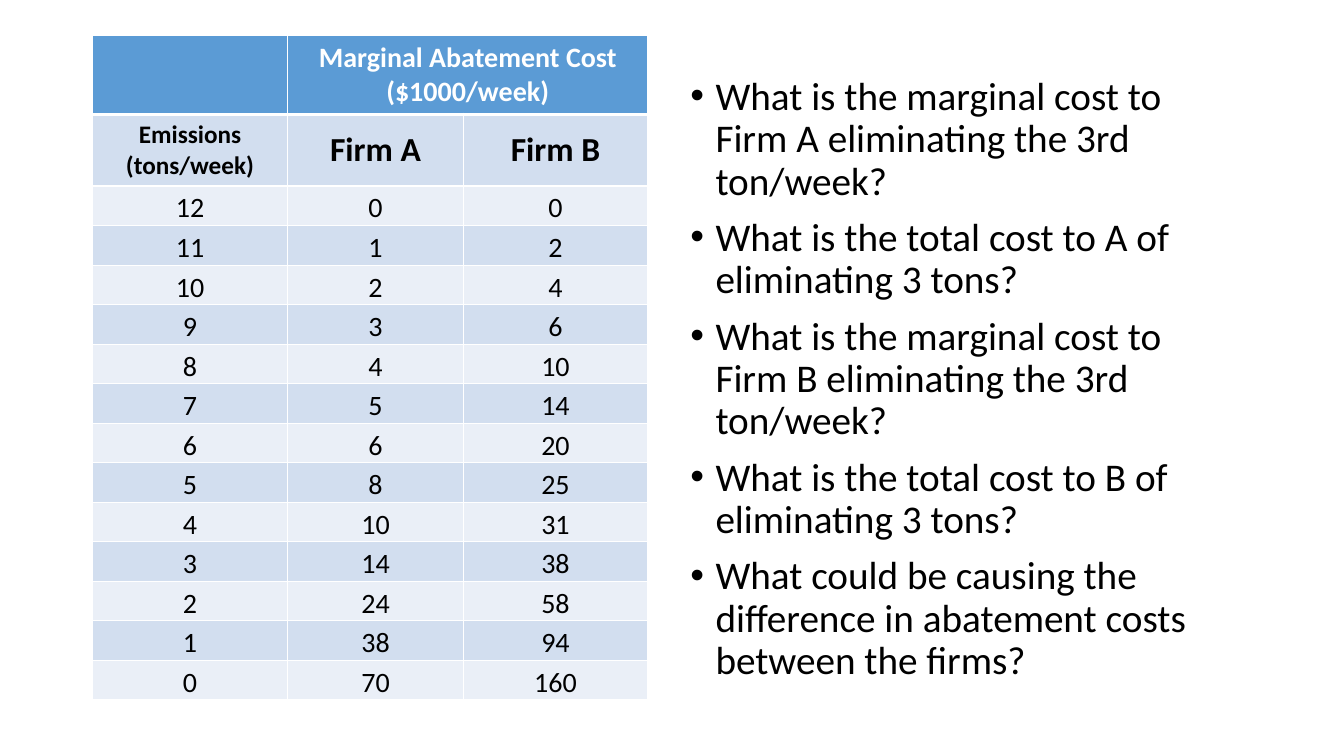
"""Builds a slide with a marginal abatement cost table and discussion questions."""
from lxml.etree import SubElement
from pptx import Presentation
from pptx.dml.color import RGBColor
from pptx.enum.text import MSO_ANCHOR as ANCHOR, PP_ALIGN as ALIGN
from pptx.oxml.ns import qn
from pptx.util import Pt

TITLE = "Marginal Abatement Cost ($1000/week)"
HEADINGS = [("Emissions (tons/week)", 18, ANCHOR.TOP),
            ("Firm A", 24, ANCHOR.MIDDLE),
            ("Firm B", 24, ANCHOR.MIDDLE)]
FIRM_A = [0, 1, 2, 3, 4, 5, 6, 8, 10, 14, 24, 38, 70]
FIRM_B = [0, 2, 4, 6, 10, 14, 20, 25, 31, 38, 58, 94, 160]
COSTS = list(zip(range(12, -1, -1), FIRM_A, FIRM_B))
QUESTIONS = [
    "What is the marginal cost to Firm A eliminating the 3rd ton/week?",
    "What is the total cost to A of eliminating 3 tons?",
    "What is the marginal cost to Firm B eliminating the 3rd ton/week?",
    "What is the total cost to B of eliminating 3 tons?",
    "What could be causing the difference in abatement costs between the firms?",
]

FONT = "Calibri"
WHITE = RGBColor(0xFF, 0xFF, 0xFF)
BLACK = RGBColor(0x00, 0x00, 0x00)
BLUE = RGBColor(0x5B, 0x9B, 0xD5)
BANDS = [RGBColor(0xEA, 0xEF, 0xF7), RGBColor(0xD2, 0xDE, 0xEF)]
COL_WIDTHS = [139.7, 125.3, 131.8]
ROW_HEIGHTS = [50.4, 46.1] + [28.25] * len(COSTS)
INDENT = 18


def style(p, size, color=BLACK, bold=False):
    for r in p.runs:
        r.font.name = FONT
        r.font.size = Pt(size)
        r.font.bold = bold
        r.font.color.rgb = color


def add_borders(cell, row):
    tc_pr = cell._tc.get_or_add_tcPr()
    widths = {"L": 1, "R": 1, "T": 3 if row == 1 else 1, "B": 3 if row == 0 else 1}
    for i, (side, width) in enumerate(widths.items()):
        ln = SubElement(tc_pr, qn(f"a:ln{side}"), w=str(Pt(width)))
        fill = SubElement(ln, qn("a:solidFill"))
        SubElement(fill, qn("a:srgbClr"), val=str(WHITE))
        tc_pr.insert(i, ln)


def write_cell(cell, text, size, anchor, color=BLACK, bold=True):
    cell.text_frame.text = str(text)
    cell.vertical_anchor = anchor
    p = cell.text_frame.paragraphs[0]
    p.alignment = ALIGN.CENTER
    style(p, size, color, bold)
    return p


def add_cost_table(slide):
    table = slide.shapes.add_table(len(ROW_HEIGHTS), len(COL_WIDTHS), Pt(65.9), Pt(25.5),
                                   Pt(sum(COL_WIDTHS)), Pt(sum(ROW_HEIGHTS))).table
    for col, width in zip(table.columns, COL_WIDTHS):
        col.width = Pt(width)
    for i, height in enumerate(ROW_HEIGHTS):
        table.rows[i].height = Pt(height)
        for cell in table.rows[i].cells:
            cell.fill.solid()
            cell.fill.fore_color.rgb = BANDS[i % 2] if i else BLUE
            add_borders(cell, i)

    table.cell(0, 1).merge(table.cell(0, 2))
    write_cell(table.cell(0, 1), TITLE, 20, ANCHOR.TOP, WHITE)
    for j, (text, size, anchor) in enumerate(HEADINGS):
        write_cell(table.cell(1, j), text, size, anchor)
    for i, values in enumerate(COSTS, 2):
        for j, value in enumerate(values):
            cell = table.cell(i, j)
            p = write_cell(cell, value, 20, ANCHOR.BOTTOM, bold=False)
            p.line_spacing = 1.15
            cell.margin_left = cell.margin_right = Pt(5)
            cell.margin_top = cell.margin_bottom = 0


def add_questions(slide):
    tf = slide.shapes.add_textbox(Pt(486), Pt(51.1), Pt(406), Pt(466.6)).text_frame
    tf.word_wrap = True
    for i, question in enumerate(QUESTIONS):
        p = tf.add_paragraph() if i else tf.paragraphs[0]
        p.text = question
        p.line_spacing = 0.9
        p.space_before = Pt(10)
        style(p, 28)
        p_pr = p._p.get_or_add_pPr()
        p_pr.set("marL", str(Pt(INDENT)))
        p_pr.set("indent", str(-Pt(INDENT)))
        SubElement(p_pr, qn("a:buFont"), typeface="Arial")
        SubElement(p_pr, qn("a:buChar"), char="•")


def main():
    prs = Presentation()
    prs.slide_width, prs.slide_height = Pt(960), Pt(540)
    slide = prs.slides.add_slide(prs.slide_layouts[6])
    add_cost_table(slide)
    add_questions(slide)
    prs.save("out.pptx")


if __name__ == "__main__":
    main()
